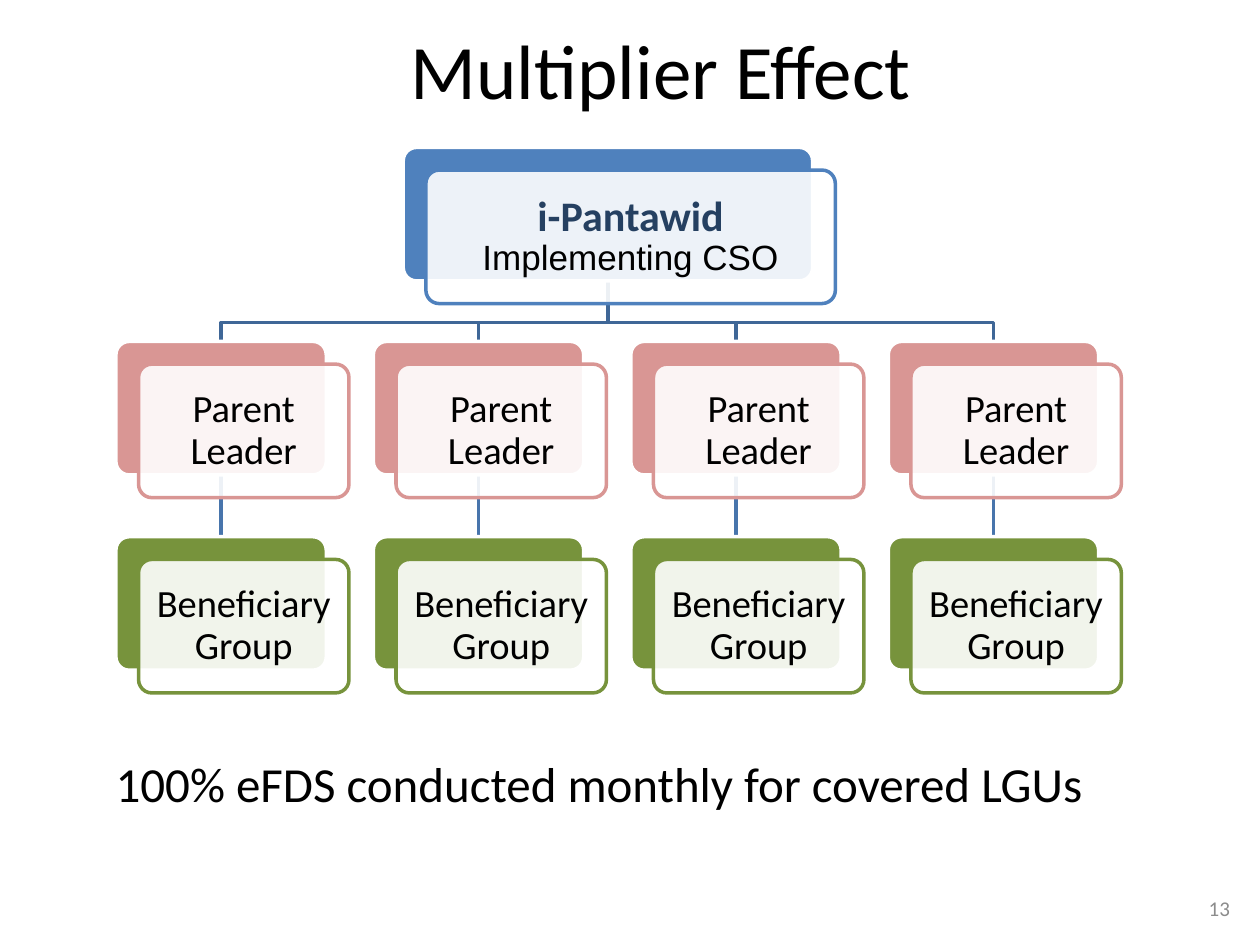
"""Build the Multiplier Effect slide: an organisation chart in three levels."""
from dataclasses import dataclass

from lxml import etree
from pptx import Presentation
from pptx.dml.color import RGBColor
from pptx.enum.shapes import MSO_CONNECTOR, MSO_SHAPE
from pptx.enum.text import MSO_ANCHOR, PP_ALIGN
from pptx.oxml.ns import qn
from pptx.util import Inches, Pt

ROUNDED, STRAIGHT = MSO_SHAPE.ROUNDED_RECTANGLE, MSO_CONNECTOR.STRAIGHT
MIDDLE, TOP = MSO_ANCHOR.MIDDLE, MSO_ANCHOR.TOP
CENTER, LEFT, RIGHT = PP_ALIGN.CENTER, PP_ALIGN.LEFT, PP_ALIGN.RIGHT

COLORS = {
    "white": "FFFFFF", "black": "000000", "gray": "8C8C8C", "navy": "254061",
    "blue": "4F81BD", "rose": "D99694", "green": "77933C",
    "branch": "3F6797", "drop": "4875AC",
}
CARD_H, CARD_W, OFFSET = 1.06, 1.67, 0.18
FIRST_X, LAST_X = 0.92, 7.05
COLUMNS = [FIRST_X + (LAST_X - FIRST_X) * i / 3 for i in range(4)]
ROOT_X, ROOT_Y, ROOT_W = 3.2, 1.17, 3.25
LEADER_Y, GROUP_Y, BUS_Y = 2.71, 4.26, 2.56


@dataclass
class Run:
    text: str
    size: int
    color: str = "black"
    font: str = "Calibri"
    bold: bool = False


@dataclass
class Card:
    x: float
    y: float
    w: float
    color: str
    runs: list[Run]


def rgb(name: str) -> RGBColor:
    return RGBColor.from_string(COLORS[name])


def write(tf, runs: list[Run], align, anchor, wrap: bool = True) -> None:
    tf.word_wrap, tf.vertical_anchor = wrap, anchor
    p = tf.paragraphs[0]
    p.alignment = align
    for run in runs:
        r = p.add_run()
        r.text = run.text
        fmt = {"size": Pt(run.size), "name": run.font, "bold": run.bold}
        for key, value in fmt.items():
            setattr(r.font, key, value)
        r.font.color.rgb = rgb(run.color)


def add_label(s, x: float, y: float, w: float, h: float, run: Run, align, anchor, wrap: bool) -> None:
    box = s.shapes.add_textbox(Inches(x), Inches(y), Inches(w), Inches(h))
    write(box.text_frame, [run], align, anchor, wrap)


def add_panel(s, x: float, y: float, w: float, fill: str, line: str):
    sp = s.shapes.add_shape(ROUNDED, Inches(x), Inches(y), Inches(w), Inches(CARD_H))
    sp.shadow.inherit = False
    sp.adjustments[0] = 0.1
    sp.fill.solid()
    sp.fill.fore_color.rgb = rgb(fill)
    sp.line.color.rgb = rgb(line)
    sp.line.width = Pt(2)
    return sp


def add_card(s, card: Card) -> None:
    add_panel(s, card.x, card.y, card.w, card.color, "white")
    sp = add_panel(s, card.x + OFFSET, card.y + OFFSET, card.w, "white", card.color)
    color = sp.fill._xPr.find(qn("a:solidFill"))[0]
    etree.SubElement(color, qn("a:alpha"), val="90000")
    tf = sp.text_frame
    for side in ("left", "right", "top", "bottom"):
        setattr(tf, f"margin_{side}", Inches(0.08))
    write(tf, card.runs, CENTER, MIDDLE)
    tf.paragraphs[0].line_spacing = 0.9


def add_branch(s, x: float) -> None:
    root = ROOT_X + ROOT_W / 2
    points = [(root, BUS_Y), (x, BUS_Y), (x, LEADER_Y)]
    builder = s.shapes.build_freeform(Inches(root), Inches(ROOT_Y + CARD_H))
    builder.add_line_segments([(Inches(a), Inches(b)) for a, b in points], close=False)
    sp = builder.convert_to_shape()
    sp.shadow.inherit = False
    sp.fill.background()
    sp.line.color.rgb = rgb("branch")
    sp.line.width = Pt(2)


def add_drop(s, x: float) -> None:
    line = s.shapes.add_connector(STRAIGHT, Inches(x), Inches(LEADER_Y + CARD_H), Inches(x), Inches(GROUP_Y))
    line.line.color.rgb = rgb("drop")
    line.line.width = Pt(2)
    etree.SubElement(line._element.spPr, qn("a:effectLst"))


def main() -> None:
    prs = Presentation()
    prs.slide_width, prs.slide_height = Inches(10), Inches(7.5)
    s = prs.slides.add_slide(prs.slide_layouts[5])
    title = s.shapes.title
    frame = {"left": 2.83, "top": -0.08, "width": 4.83, "height": 1.25}
    for key, value in frame.items():
        setattr(title, key, Inches(value))
    write(title.text_frame, [Run("Multiplier Effect", 44)], CENTER, MIDDLE)

    for x in reversed(COLUMNS):
        add_drop(s, x + CARD_W / 2)
        add_branch(s, x + CARD_W / 2)

    root_runs = [Run("i-Pantawid ", 24, "navy", bold=True), Run("Implementing CSO", 20, font="Arial")]
    add_card(s, Card(ROOT_X, ROOT_Y, ROOT_W, "blue", root_runs))
    for x in COLUMNS:
        add_card(s, Card(x, LEADER_Y, CARD_W, "rose", [Run("Parent Leader", 22)]))
        add_card(s, Card(x, GROUP_Y, CARD_W, "green", [Run("Beneficiary Group", 22)]))

    summary = Run("100% eFDS conducted monthly for covered LGUs", 28)
    add_label(s, 0.82, 5.93, 8.27, 0.57, summary, LEFT, TOP, False)
    add_label(s, 9.46, 7.01, 0.4, 0.4, Run("13", 12, "gray"), RIGHT, MIDDLE, True)
    prs.save("out.pptx")


if __name__ == "__main__":
    main()
